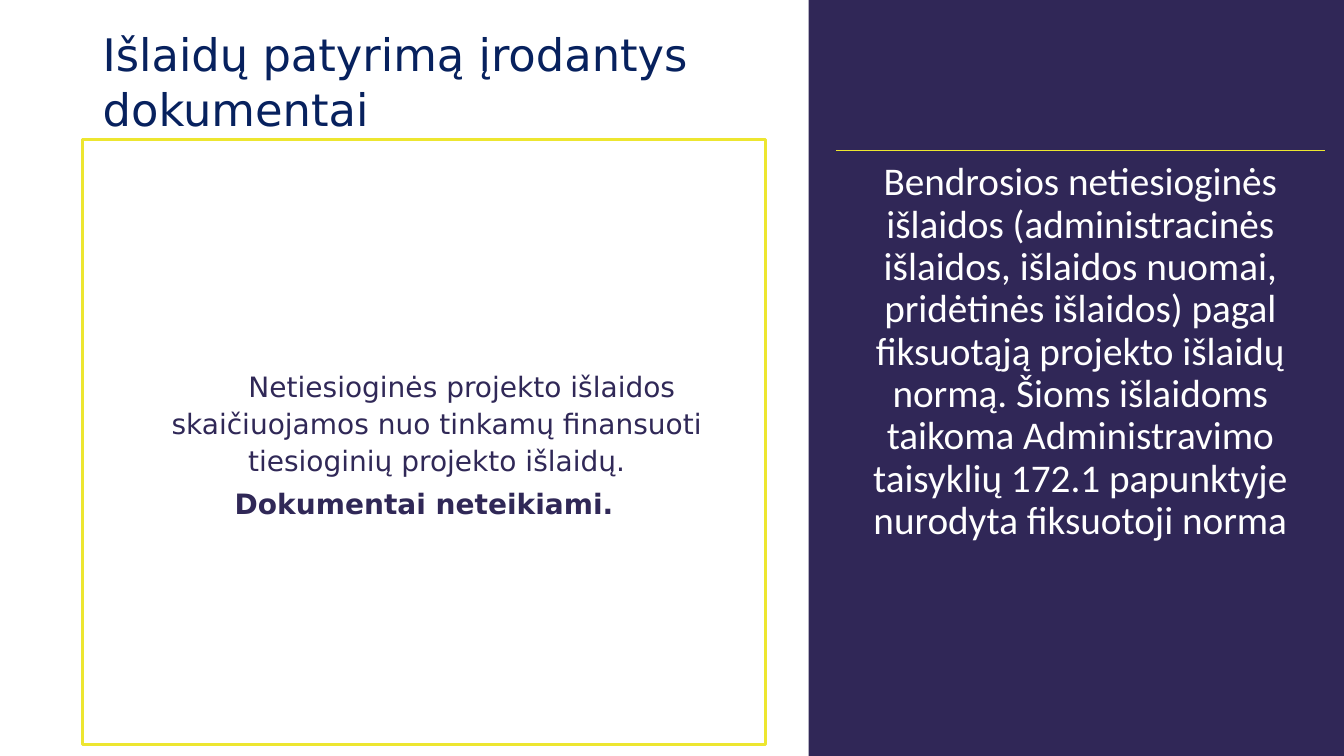
from lxml.etree import SubElement
from pptx import Presentation
from pptx.dml.color import RGBColor
from pptx.enum.shapes import MSO_CONNECTOR, MSO_SHAPE
from pptx.enum.text import MSO_AUTO_SIZE, PP_ALIGN
from pptx.oxml.ns import qn
from pptx.util import Pt

WIDTH, HEIGHT = 960, 540
COLORS = {"panel": "302757", "title": "07215E", "body": "302857",
          "accent": "EDE630", "light": "FFFFFF"}
SANS = "DejaVu Sans"


def color(name):
    return RGBColor.from_string(COLORS[name])


def add_frame(slide, box, inset=None, grow=False):
    frame = slide.shapes.add_textbox(*map(Pt, box)).text_frame
    frame.word_wrap = True
    frame.auto_size = MSO_AUTO_SIZE.SHAPE_TO_FIT_TEXT if grow else MSO_AUTO_SIZE.NONE
    if inset:
        frame.margin_left = frame.margin_right = Pt(inset)
        frame.margin_top = frame.margin_bottom = Pt(inset)
    return frame


def add_text(frame, text, size, ink, font=SANS, bold=False, align=PP_ALIGN.LEFT,
             line=1, after=0, left=0, indent=0):
    """Write one paragraph, filling the frame's empty first one if it can."""
    para = frame.paragraphs[0] if not frame.text else frame.add_paragraph()
    para.alignment, para.line_spacing = align, line
    para.space_before, para.space_after = Pt(0), Pt(after)
    if left or indent:
        props = para._p.get_or_add_pPr()
        props.set("marL", str(Pt(left)))
        props.set("indent", str(Pt(indent)))
    run = para.add_run()
    run.text = text
    run.font.name, run.font.size, run.font.bold = font, Pt(size), bold
    run.font.color.rgb = color(ink)


def add_title(slide, box):
    frame = add_frame(slide, box, grow=True)
    add_text(frame, "Išlaidų patyrimą įrodantys dokumentai", 32, "title", line=1.03)


def add_body(slide, box):
    x, y, w, h = box
    border = slide.shapes.add_shape(MSO_SHAPE.ROUNDED_RECTANGLE, *map(Pt, box))
    border.adjustments[0] = 0
    border.shadow.inherit = False
    border.fill.background()
    border.line.color.rgb = color("accent")
    border.line.width = Pt(2.25)

    frame = add_frame(slide, (x + 20, y + 158.5, w - 40, 115), grow=True)
    add_text(frame, "Netiesioginės projekto išlaidos skaičiuojamos nuo tinkamų "
             "finansuoti tiesioginių projekto išlaidų.", 20, "body",
             align=PP_ALIGN.CENTER, line=1.1, after=6, left=18, indent=36)
    add_text(frame, "Dokumentai neteikiami.", 20, "body", bold=True,
             align=PP_ALIGN.CENTER, line=1.03)


def add_panel(slide, box):
    x, y, w, h = box
    panel = slide.shapes.add_shape(MSO_SHAPE.RECTANGLE, *map(Pt, box))
    panel.shadow.inherit = False
    panel.fill.solid()
    panel.fill.fore_color.rgb = color("panel")
    panel.line.fill.background()

    left, top, wide = x + 19.4, y + 107.3, 349.2
    rule = slide.shapes.add_connector(
        MSO_CONNECTOR.STRAIGHT, Pt(left), Pt(top), Pt(left + wide), Pt(top))
    rule.line.color.rgb = color("accent")
    rule.line.width = Pt(1)
    SubElement(rule._element.spPr, qn("a:effectLst"))

    frame = add_frame(slide, (left, top, wide, 392.4), inset=8.4)
    add_text(frame, "Bendrosios netiesioginės išlaidos (administracinės išlaidos, "
             "išlaidos nuomai, pridėtinės išlaidos) pagal fiksuotąją projekto "
             "išlaidų normą. Šioms išlaidoms taikoma Administravimo taisyklių "
             "172.1 papunktyje nurodyta fiksuotoji norma", 28, "light",
             font="Calibri", align=PP_ALIGN.CENTER, line=0.9)


def main():
    deck = Presentation()
    deck.slide_width, deck.slide_height = Pt(WIDTH), Pt(HEIGHT)
    slide = deck.slides.add_slide(deck.slide_layouts[6])
    split = 577.6
    add_panel(slide, (split, 0, WIDTH - split, HEIGHT))
    add_title(slide, (66.3, 14.4, 488, 85))
    add_body(slide, (59, 99.4, 488, 432.6))
    deck.save("out.pptx")


if __name__ == "__main__":
    main()
